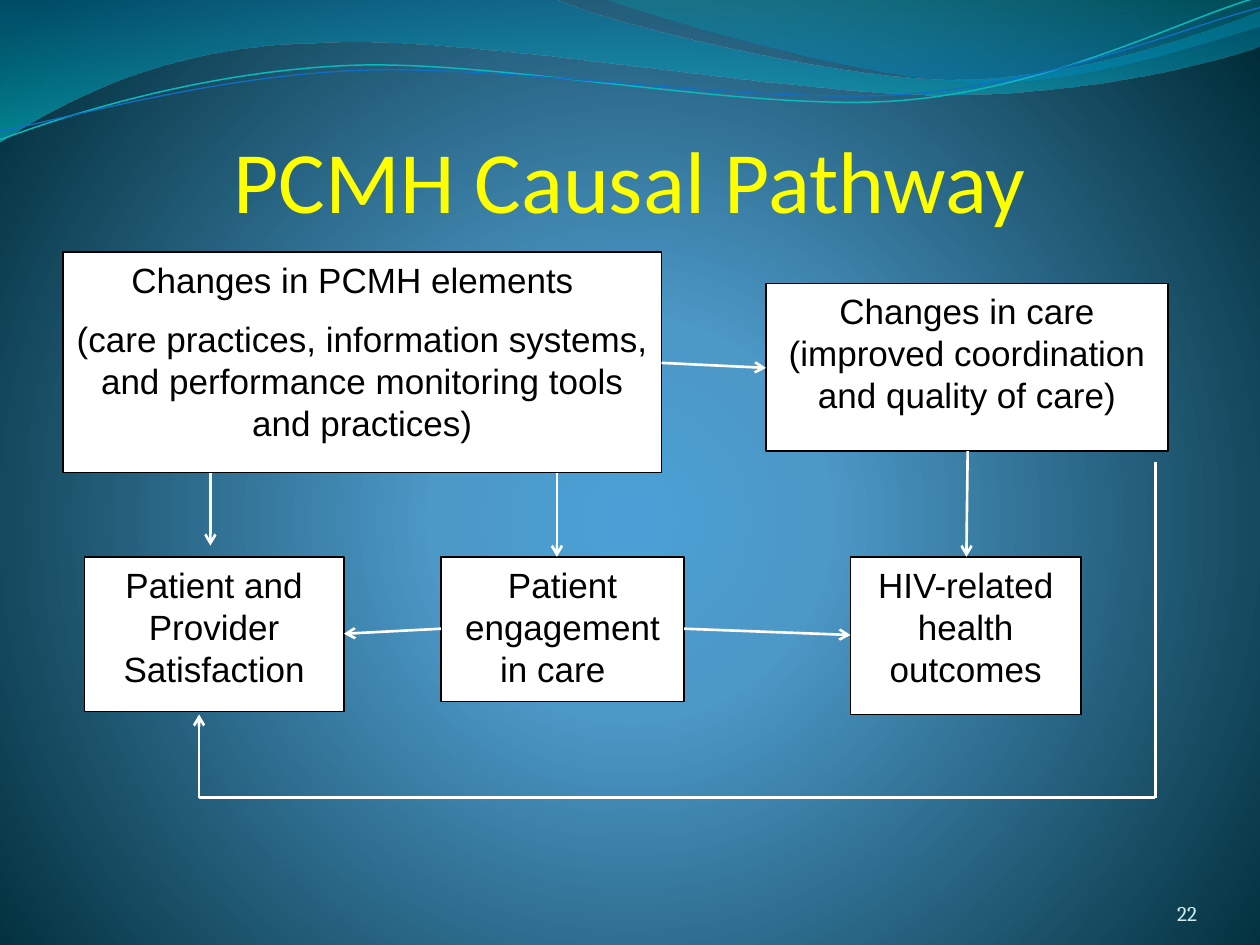
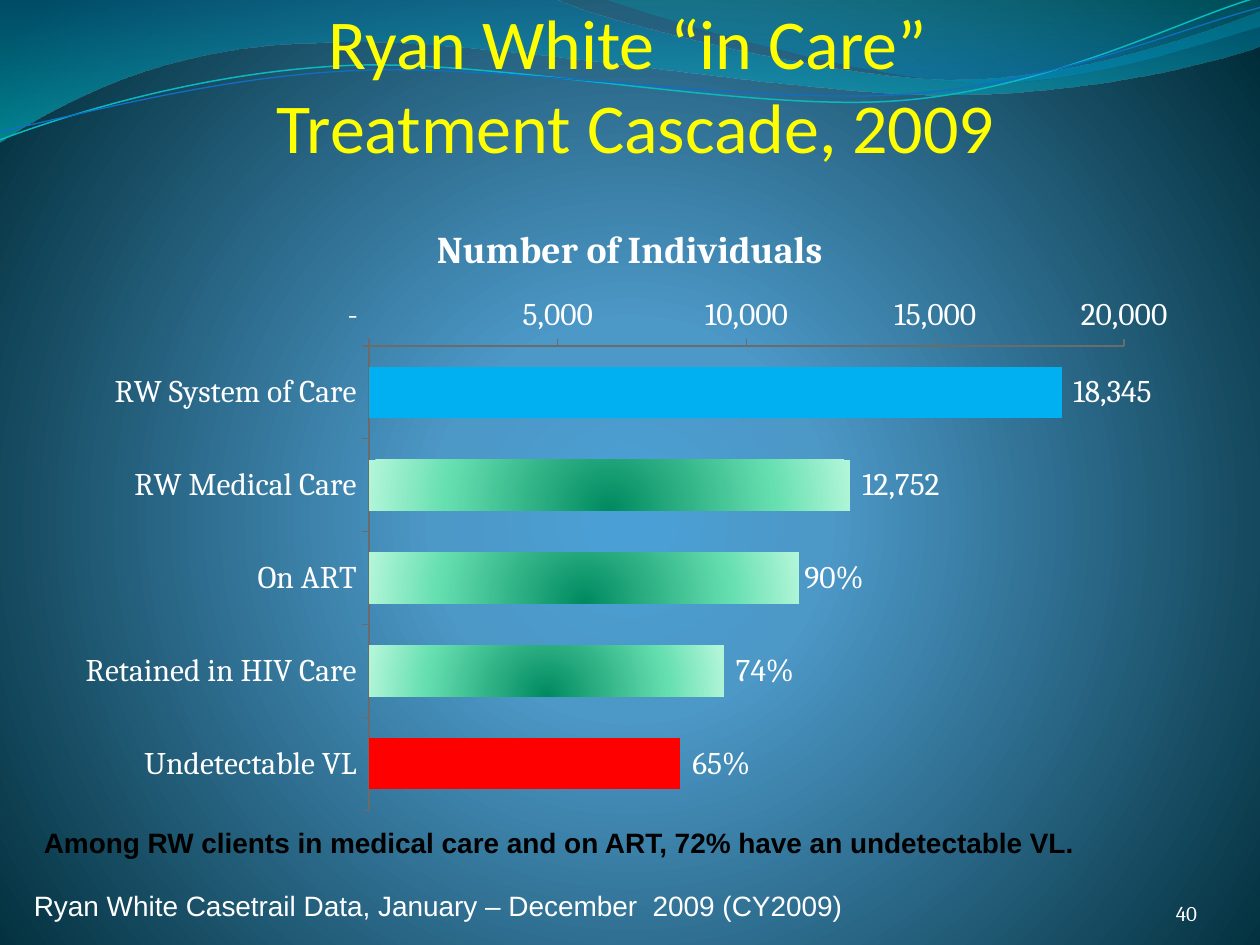
"""Build two slides: the PCMH causal pathway and the in-care treatment cascade."""
from dataclasses import dataclass
from typing import Any

from pptx import Presentation
from pptx.chart.data import CategoryChartData
from pptx.dml.color import RGBColor
from pptx.enum.chart import XL_CHART_TYPE, XL_LABEL_POSITION, XL_TICK_MARK
from pptx.enum.shapes import MSO_CONNECTOR, MSO_SHAPE
from pptx.enum.text import MSO_ANCHOR, MSO_AUTO_SIZE, PP_ALIGN
from pptx.oxml import parse_xml
from pptx.oxml.ns import nsdecls, qn
from pptx.util import Inches, Pt

BAR = XL_CHART_TYPE.BAR_CLUSTERED
OUTSIDE_END = XL_LABEL_POSITION.OUTSIDE_END
TICK_OUTSIDE = XL_TICK_MARK.OUTSIDE
STRAIGHT = MSO_CONNECTOR.STRAIGHT
RECTANGLE = MSO_SHAPE.RECTANGLE
TOP, BOTTOM = MSO_ANCHOR.TOP, MSO_ANCHOR.BOTTOM
LEFT, CENTER, RIGHT = PP_ALIGN.LEFT, PP_ALIGN.CENTER, PP_ALIGN.RIGHT
NO_AUTOFIT = MSO_AUTO_SIZE.NONE

COLORS = {
    "title": "FFFF00", "white": "FFFFFF", "black": "000000", "pale": "D1EAEE",
    "turquoise": "0AB8BF", "blue": "0F6FC6", "axis": "6B6B6B",
    "system": "00B0F0", "undetectable": "FF0000",
}
NUMBER_FORMAT = '_(* #,##0_);_(* \\(#,##0\\);_(* "-"??_);_('


@dataclass
class Gradient:
    """Stops of position, colour and opacity, with an optional circle focus."""
    stops: list[tuple[int, str, int]]
    focus: tuple[int, int, int, int] | None = None


@dataclass
class Wave:
    """A curved outline: segments of two numbers are lines, of six are curves."""
    start: tuple[float, float]
    segments: list[tuple[float, ...]]
    gradient: Gradient | None = None
    line: tuple[str, float] | None = None


@dataclass
class Box:
    """A white diagram box and its paragraphs."""
    position: tuple[float, float, float, float]
    paragraphs: list[str]


@dataclass
class Link:
    """A straight connector, usually with an arrowhead."""
    start: tuple[float, float]
    end: tuple[float, float]
    arrow: bool = True


@dataclass
class Label:
    """A single-paragraph text box."""
    position: tuple[float, float, float, float]
    text: str
    font: dict[str, Any]
    color: str
    frame: dict[str, Any]
    alignment: PP_ALIGN = LEFT


BACKGROUND = Gradient([(0, "4AA0D6", 100), (25, "4C98C7", 100), (100, "002C38", 100)],
                      (10, 110, 10, 100))
GREEN_BAR = Gradient([(0, "008A60", 100), (68, "66DFB0", 100), (100, "B0F5D8", 100)],
                     (50, 130, 50, -30))
WAVES = [
    Wave((0, -0.01), [
        (4.4, -0.01), (4.76, 0.17, 6.64, 0.63, 7.58, 0.63), (8.53, 0.63, 9.58, 0.26, 10, 0.09),
        (10.01, 0.36), (9.83, 0.44, 8.7, 0.76, 7.46, 0.75), (6.22, 0.75, 3.82, 0.28, 2.57, 0.34),
        (1.29, 0.35, 0.46, 0.83, -0.01, 1.13), (0, -0.01)],
        Gradient([(0, "0074A1", 45), (100, "00C6CF", 55)])),
    Wave((4.79, -0.01), [
        (5.09, 0.11, 6.82, 0.62, 7.69, 0.65), (8.56, 0.69, 9.61, 0.32, 10, 0.21), (10, 0),
        (4.79, -0.01)],
        Gradient([(0, "00A1A9", 30), (80, "008BBF", 45)])),
    Wave((0, 1.11), [
        (0.48, 0.93, 1.58, 0.57, 2.77, 0.52), (3.95, 0.47, 5.93, 0.89, 7.13, 0.8),
        (8.33, 0.71, 9.38, 0.15, 9.98, -0.02)], line=("turquoise", 0.85)),
    Wave((0, 1.04), [
        (0.47, 0.96, 1.64, 0.61, 2.83, 0.56), (4.03, 0.51, 5.97, 0.83, 7.17, 0.75),
        (8.36, 0.67, 9.41, 0.21, 10, 0.06)], line=("blue", 0.75)),
]
BOXES = [
    Box((0.5, 2, 4.75, 1.75), [
        "Changes in PCMH elements  ",
        "(care practices, information systems, and performance monitoring tools and practices)"]),
    Box((3.5, 4.42, 1.93, 1.15), ["Patient engagement in care  "]),
    Box((0.67, 4.42, 2.06, 1.23), ["Patient and Provider Satisfaction"]),
    Box((6.75, 4.42, 1.83, 1.25), ["HIV-related health outcomes"]),
    Box((6.08, 2.25, 3.19, 1.33), ["Changes in care (improved coordination and quality of care)"]),
]
LINKS = [
    Link((5.25, 2.88), (6.08, 2.92)),
    Link((7.68, 3.58), (7.67, 4.42)),
    Link((4.42, 3.75), (4.42, 4.42)),
    Link((1.67, 3.75), (1.67, 4.33)),
    Link((3.5, 4.99), (2.73, 5.03)),
    Link((5.43, 4.99), (6.75, 5.04)),
    Link((9.17, 3.67), (9.17, 6.33), arrow=False),
    Link((9.17, 6.33), (1.58, 6.33), arrow=False),
    Link((1.58, 6.33), (1.58, 5.67)),
]
CASCADE = {
    "RW System of Care": 18345, "RW Medical Care": 12752, "On ART": 11400,
    "Retained in HIV Care": 9400, "Undetectable VL": 8250,
}
PERCENT_LABELS = {2: "90%", 3: " 74% ", 4: " 65%"}
SOLID_BARS = {0: "system", 4: "undetectable"}
ARIAL_NOTE = {"name": "Arial", "size": Pt(16)}
NOTES = [
    Label((0.17, 7, 7.92, 0.37), "Ryan White Casetrail Data, January – December  2009 (CY2009)",
          ARIAL_NOTE, "white", {}),
    Label((0.25, 6.5, 9, 0.37),
          "Among RW clients in medical care and on ART, 72% have an undetectable VL.",
          {**ARIAL_NOTE, "bold": True}, "black", {}),
]


def apply_format(target: Any, values: dict[str, Any]) -> None:
    """Set each named attribute of the target."""
    for name, value in values.items():
        setattr(target, name, value)


def rgb(name: str) -> RGBColor:
    """Look up a named colour."""
    return RGBColor.from_string(COLORS[name])


def inches(values: tuple[float, ...]) -> list[Inches]:
    """Convert numbers to lengths."""
    return [Inches(value) for value in values]


def style_font(font: Any, color: str, values: dict[str, Any]) -> None:
    """Give a font its colour and format values."""
    apply_format(font, values)
    font.color.rgb = rgb(color)


def apply_gradient(fill: Any, container: Any, gradient: Gradient) -> None:
    """Give the first fill in the container a gradient."""
    fill.solid()
    solid = container.find(".//" + qn("a:solidFill"))
    stops = "".join(
        f'<a:gs pos="{position * 1000}"><a:srgbClr val="{color}">'
        f'<a:alpha val="{opacity * 1000}"/></a:srgbClr></a:gs>'
        for position, color, opacity in gradient.stops)
    shade = '<a:lin ang="5400000" scaled="1"/>'
    if gradient.focus:
        sides = " ".join(f'{side}="{value * 1000}"' for side, value in zip("ltrb", gradient.focus))
        shade = f'<a:path path="circle"><a:fillToRect {sides}/></a:path>'
    solid.getparent().replace(solid, parse_xml(
        f'<a:gradFill {nsdecls("a")} rotWithShape="1"><a:gsLst>{stops}</a:gsLst>{shade}</a:gradFill>'))


def build_wave(slide: Any, wave: Wave) -> Any:
    """Build a freeform and turn each run of three control points into a curve."""
    points = [inches(segment[start:start + 2])
              for segment in wave.segments for start in range(0, len(segment), 2)]
    builder = slide.shapes.build_freeform(*inches(wave.start))
    builder.add_line_segments(points, close=wave.gradient is not None)
    shape = builder.convert_to_shape()
    steps = iter(shape.element.spPr.findall(".//" + qn("a:lnTo")))
    for segment in wave.segments:
        controls = [next(steps) for _ in range(len(segment) // 2)]
        if len(controls) == 3:
            curve = parse_xml(f'<a:cubicBezTo {nsdecls("a")}/>')
            controls[0].addprevious(curve)
            for control in controls:
                curve.append(control[0])
                control.getparent().remove(control)
    return shape


def add_waves(slide: Any, layout: Any) -> None:
    """Build the waves and place them at the back of the shared layout."""
    for index, wave in enumerate(WAVES):
        shape = build_wave(slide, wave)
        shape.shadow.inherit = False
        if wave.gradient:
            shape.line.fill.background()
            apply_gradient(shape.fill, shape.element.spPr, wave.gradient)
        else:
            shape.fill.background()
            color, width = wave.line
            shape.line.color.rgb = rgb(color)
            shape.line.width = Pt(width)
        shape.element.nvSpPr.cNvPr.set("id", str(100 + index))
        layout.shapes.element.insert(2 + index, shape.element)


def set_title(slide: Any, text: str, position: tuple[float, ...], size: int) -> None:
    """Place and format the title placeholder."""
    title = slide.shapes.title
    apply_format(title, dict(zip(("left", "top", "width", "height"), inches(position))))
    frame = title.text_frame
    frame.text = text
    apply_format(frame, {"vertical_anchor": BOTTOM, "auto_size": NO_AUTOFIT, "word_wrap": True,
                         "margin_left": 0, "margin_top": Inches(0.05),
                         "margin_right": 0, "margin_bottom": 0})
    paragraph = frame.paragraphs[0]
    paragraph.alignment = CENTER
    for run in paragraph.runs:
        style_font(run.font, "title", {"name": "Calibri", "size": Pt(size)})


def add_label(slide: Any, label: Label) -> None:
    """Add a text box."""
    frame = slide.shapes.add_textbox(*inches(label.position)).text_frame
    apply_format(frame, {"word_wrap": True, **label.frame})
    paragraph = frame.paragraphs[0]
    paragraph.text = label.text
    paragraph.alignment = label.alignment
    style_font(paragraph.runs[0].font, label.color, label.font)


def add_slide_number(slide: Any, number: str, color: str) -> None:
    """Add the page number at the bottom right."""
    margins = {f"margin_{side}": 0 for side in ("left", "top", "right", "bottom")}
    add_label(slide, Label((8.67, 6.95, 0.83, 0.4), number, {"name": "Cambria", "size": Pt(12)},
                           color, {"vertical_anchor": BOTTOM, **margins}, RIGHT))


def add_box(slide: Any, box: Box) -> None:
    """Add a diagram box."""
    shape = slide.shapes.add_shape(RECTANGLE, *inches(box.position))
    shape.shadow.inherit = False
    shape.fill.solid()
    shape.fill.fore_color.rgb = rgb("white")
    shape.line.color.rgb = rgb("black")
    shape.line.width = Pt(0.75)
    frame = shape.text_frame
    apply_format(frame, {"text": "\n".join(box.paragraphs), "vertical_anchor": TOP,
                         "word_wrap": True})
    for paragraph in frame.paragraphs:
        apply_format(paragraph, {"alignment": CENTER, "space_after": Pt(10)})
        style_font(paragraph.runs[0].font, "black", {"name": "Arial", "size": Pt(20)})


def add_link(slide: Any, link: Link) -> None:
    """Add a white connector."""
    connector = slide.shapes.add_connector(STRAIGHT, *inches(link.start + link.end))
    connector.line.color.rgb = rgb("white")
    connector.line.width = Pt(1.5)
    properties = connector.element.spPr
    if link.arrow:
        properties.find(qn("a:ln")).append(parse_xml(f'<a:tailEnd {nsdecls("a")} type="arrow"/>'))
    properties.append(parse_xml(f'<a:effectLst {nsdecls("a")}/>'))


def add_cascade_chart(slide: Any) -> None:
    """Add the bar chart of the treatment cascade."""
    data = CategoryChartData()
    data.categories = list(CASCADE)
    data.add_series("Number of Individuals", list(CASCADE.values()))
    chart = slide.shapes.add_chart(BAR, *inches((0.5, 1.58, 9, 4.95)), data).chart
    text_format = {"name": "Cambria", "size": Pt(18)}
    style_font(chart.font, "white", text_format)
    apply_format(chart, {"has_legend": False, "has_title": True})
    chart.chart_title.text_frame.text = "Number of Individuals"
    style_font(chart.chart_title.text_frame.paragraphs[0].runs[0].font, "white",
               {**text_format, "size": Pt(21.6), "bold": True})
    chart.category_axis.reverse_order = True
    apply_format(chart.value_axis, {"minimum_scale": 0, "maximum_scale": 20000, "major_unit": 5000,
                                    "has_major_gridlines": False})
    number_format = {"number_format": NUMBER_FORMAT, "number_format_is_linked": False}
    apply_format(chart.value_axis.tick_labels, number_format)
    for axis in (chart.category_axis, chart.value_axis):
        axis.major_tick_mark = TICK_OUTSIDE
        axis.format.line.color.rgb = rgb("axis")
    apply_format(chart.plots[0], {"gap_width": 81, "vary_by_categories": False})
    series = chart.plots[0].series[0]
    apply_format(series.data_labels, {"show_value": True, "position": OUTSIDE_END, **number_format})
    style_font(series.data_labels.font, "white", text_format)
    for index in range(len(CASCADE)):
        point = series.points[index]
        fill = point.format.fill
        fill.solid()
        if index in SOLID_BARS:
            fill.fore_color.rgb = rgb(SOLID_BARS[index])
        else:
            container = chart.element.xpath(f'.//c:dPt[c:idx/@val="{index}"]')[0]
            apply_gradient(fill, container, GREEN_BAR)
        if index in PERCENT_LABELS:
            frame = point.data_label.text_frame
            frame.text = PERCENT_LABELS[index]
            style_font(frame.paragraphs[0].runs[0].font, "white", text_format)
            point.data_label.position = OUTSIDE_END


def main() -> None:
    """Build and save the presentation."""
    presentation = Presentation()
    apply_format(presentation, {"slide_width": Inches(10), "slide_height": Inches(7.5)})
    master = presentation.slide_master
    apply_gradient(master.background.fill, master.element, BACKGROUND)
    layout = presentation.slide_layouts[5]
    pathway, cascade = (presentation.slides.add_slide(layout) for _ in range(2))
    add_waves(pathway, layout)

    set_title(pathway, "PCMH Causal Pathway", (0.5, 0.58, 9, 1.25), 50)
    add_slide_number(pathway, "22", "pale")
    for box in BOXES:
        add_box(pathway, box)
    for link in LINKS:
        add_link(pathway, link)

    set_title(cascade, "Ryan White “in Care” \vTreatment Cascade, 2009", (0.17, 0.08, 9.75, 1.25), 40)
    add_cascade_chart(cascade)
    add_slide_number(cascade, "40", "white")
    for note in NOTES:
        add_label(cascade, note)
    presentation.save("out.pptx")


if __name__ == "__main__":
    main()
